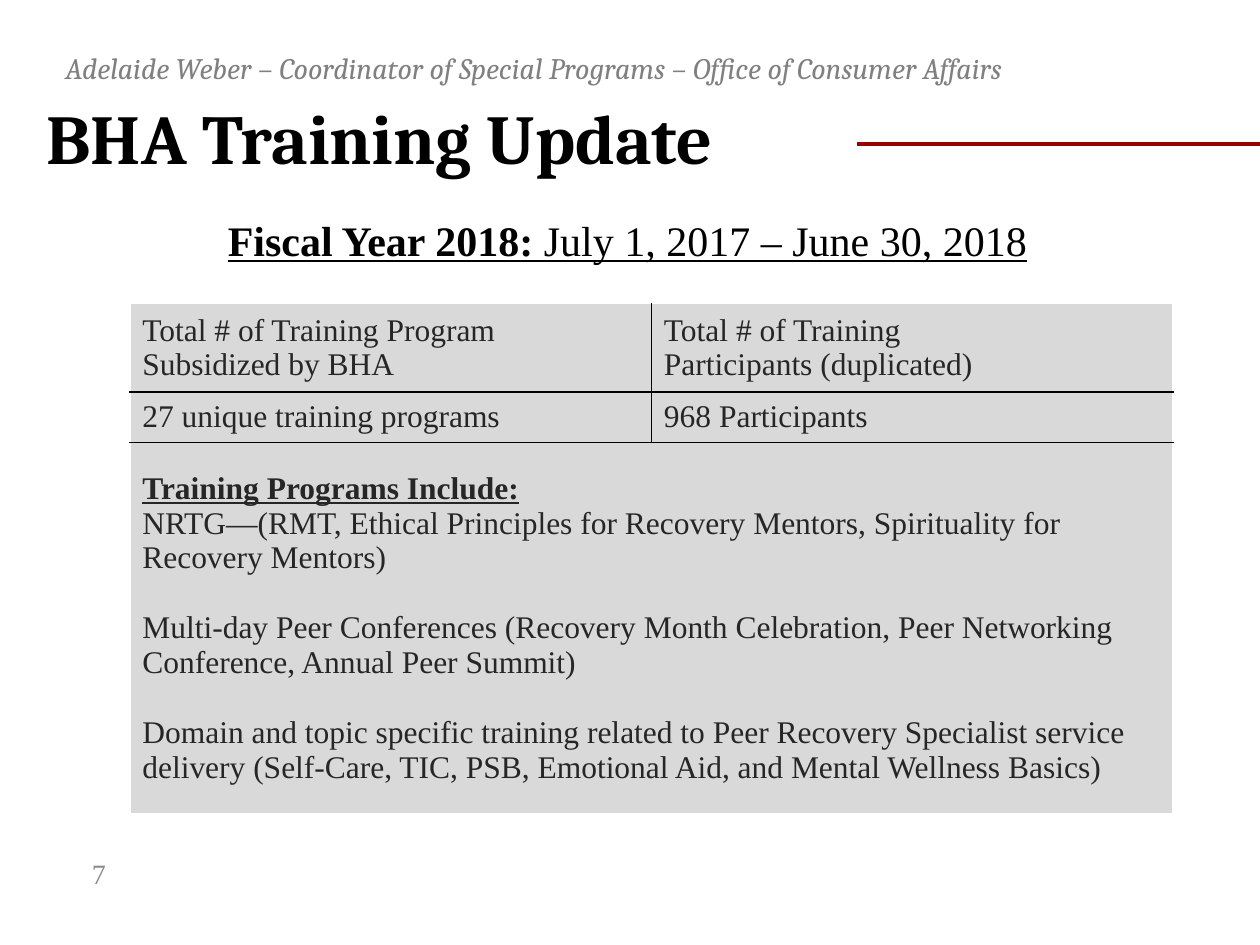
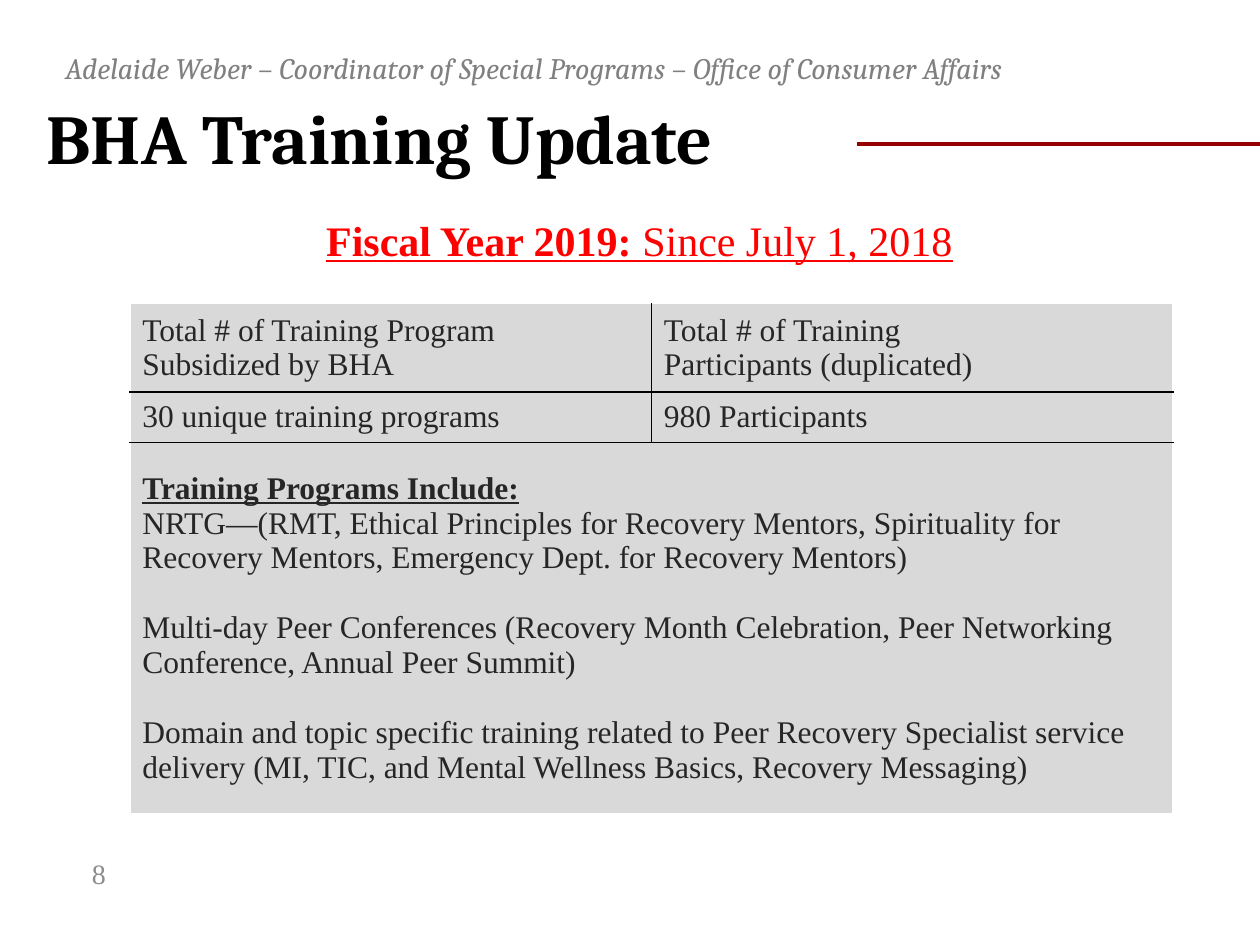
from lxml.etree import SubElement
from pptx import Presentation
from pptx.dml.color import RGBColor
from pptx.enum.shapes import MSO_CONNECTOR
from pptx.enum.text import MSO_ANCHOR, MSO_AUTO_SIZE
from pptx.oxml.ns import qn
from pptx.util import Inches, Pt

SERIF = "Times New Roman"
HEADING = "Cambria"
BLACK, WHITE, RED = "000000", "FFFFFF", "FF0000"
MAROON, GRAY, NUMBER_GRAY = "980000", "808080", "8C8C8C"
CELL_FILL, CELL_TEXT = "D9D9D9", "262626"

TITLE_BOX = (0.27, 0.4, 9.04, 1.45)
SPEAKER_BOX = (0.42, 0.4, 8.89, 0.49)
NUMBER_BOX = (0.63, 6.73, 0.55, 0.4)
RULE = (6.8, 1.14, 10, 1.14)
TABLE_BOX = (1.03, 2.41, 8.28, 4.05)
ROW_HEIGHTS = (0.53, 0.35, 2.95)

SPEAKER = "Adelaide Weber – Coordinator of Special Programs – Office of Consumer Affairs"
CONFERENCES = ("Multi-day Peer Conferences (Recovery Month Celebration, "
               "Peer Networking Conference, Annual Peer Summit)")
COACHING = ("NRTG—(RMT, Ethical Principles for Recovery Mentors, "
            "Spirituality for Recovery Mentors")
SPECIALIST = ("Domain and topic specific training related to "
              "Peer Recovery Specialist service delivery ")

YEARS = [
    dict(number="7", year="Fiscal Year 2018: ", period="July 1, 2017 – June 30, 2018",
         color=BLACK, heading_box=(1.71, 1.65, 6.74, 0.5),
         programs="27 unique training programs", participants="968 Participants",
         coaching=COACHING + ")",
         specialist=SPECIALIST + "(Self-Care, TIC, PSB, Emotional Aid, "
                                 "and Mental Wellness Basics)"),
    dict(number="8", year="Fiscal Year 2019: ", period="Since July 1, 2018",
         color=RED, heading_box=(2.49, 1.65, 5.22, 0.5),
         programs="30 unique training programs", participants="980 Participants",
         coaching=COACHING + ", Emergency Dept. for Recovery Mentors)",
         specialist=SPECIALIST + "(MI, TIC, and Mental Wellness Basics, "
                                 "Recovery Messaging)"),
]


def rgb(value):
    return RGBColor.from_string(value)


def add_span(para, text, size, color, font=SERIF, bold=False, italic=False, underline=False):
    span = para.add_run()
    span.text = text
    span.font.name = font
    span.font.size = Pt(size)
    span.font.color.rgb = rgb(color)
    span.font.bold = bold
    span.font.italic = italic
    span.font.underline = underline


def add_text_box(page, box, anchor=MSO_ANCHOR.TOP, wrap=True, line_spacing=None):
    frame = page.shapes.add_textbox(*map(Inches, box)).text_frame
    frame.word_wrap = wrap
    frame.vertical_anchor = anchor
    para = frame.paragraphs[0]
    para.line_spacing = line_spacing
    return frame, para


def add_page_frame(page, number):
    _, para = add_text_box(page, TITLE_BOX, MSO_ANCHOR.MIDDLE, line_spacing=0.9)
    add_span(para, "BHA Training Update", 40, BLACK, HEADING, bold=True)
    _, para = add_text_box(page, NUMBER_BOX, MSO_ANCHOR.MIDDLE)
    add_span(para, number, 16, NUMBER_GRAY)
    _, para = add_text_box(page, SPEAKER_BOX, line_spacing=0.8)
    add_span(para, SPEAKER, 17, GRAY, HEADING, italic=True)
    rule = page.shapes.add_connector(MSO_CONNECTOR.STRAIGHT, *map(Inches, RULE))
    rule.line.color.rgb = rgb(MAROON)
    rule.line.width = Pt(2.25)
    SubElement(rule._element.spPr, qn("a:effectLst"))


def add_year_heading(page, box, year, period, color):
    frame, para = add_text_box(page, box, wrap=False)
    frame.auto_size = MSO_AUTO_SIZE.SHAPE_TO_FIT_TEXT
    add_span(para, year, 24, color, bold=True, underline=True)
    add_span(para, period, 24, color, underline=True)


def style_cell(cell, left, right, top, bottom):
    properties = cell._tc.get_or_add_tcPr()
    for side, color in zip("LRTB", (left, right, top, bottom)):
        border = SubElement(properties, qn(f"a:ln{side}"), w=str(Pt(1)))
        fill = SubElement(border, qn("a:solidFill"))
        SubElement(fill, qn("a:srgbClr"), val=color)
    cell.fill.solid()
    cell.fill.fore_color.rgb = rgb(CELL_FILL)
    cell.vertical_anchor = MSO_ANCHOR.MIDDLE


def fill_cell(cell, lines):
    for index, line in enumerate(lines):
        frame = cell.text_frame
        para = frame.add_paragraph() if index else frame.paragraphs[0]
        add_span(para, line, 18, CELL_TEXT)


def add_training_table(page, box, year):
    table = page.shapes.add_table(len(ROW_HEIGHTS), 2, *map(Inches, box)).table
    table.first_row = False
    table.horz_banding = False
    for column in table.columns:
        column.width = Inches(box[2] / 2)
    for row, height in zip(table.rows, ROW_HEIGHTS):
        row.height = Inches(height)

    last = len(ROW_HEIGHTS) - 1
    for row in range(last + 1):
        divider = WHITE if row == last else BLACK
        top = BLACK if row else WHITE
        bottom = WHITE if row == last else BLACK
        style_cell(table.cell(row, 0), WHITE, divider, top, bottom)
        style_cell(table.cell(row, 1), divider, WHITE, top, bottom)

    fill_cell(table.cell(0, 0), ["Total # of Training Program Subsidized by BHA"])
    fill_cell(table.cell(0, 1), ["Total # of Training", "Participants (duplicated)"])
    fill_cell(table.cell(1, 0), [year["programs"]])
    fill_cell(table.cell(1, 1), [year["participants"]])

    details = table.cell(last, 0)
    details.merge(table.cell(last, 1))
    fill_cell(details, ["Training Programs Include:", year["coaching"],
                        CONFERENCES, year["specialist"]])
    heading, _, *later = details.text_frame.paragraphs
    heading.runs[0].font.bold = True
    heading.runs[0].font.underline = True
    for para in later:
        para.space_before = Pt(20)


def main():
    deck = Presentation()
    deck.slide_width, deck.slide_height = Inches(10), Inches(7.5)
    for year in YEARS:
        page = deck.slides.add_slide(deck.slide_layouts[6])
        add_page_frame(page, year["number"])
        add_training_table(page, TABLE_BOX, year)
        add_year_heading(page, year["heading_box"], year["year"], year["period"], year["color"])
    deck.save("out.pptx")


if __name__ == "__main__":
    main()
